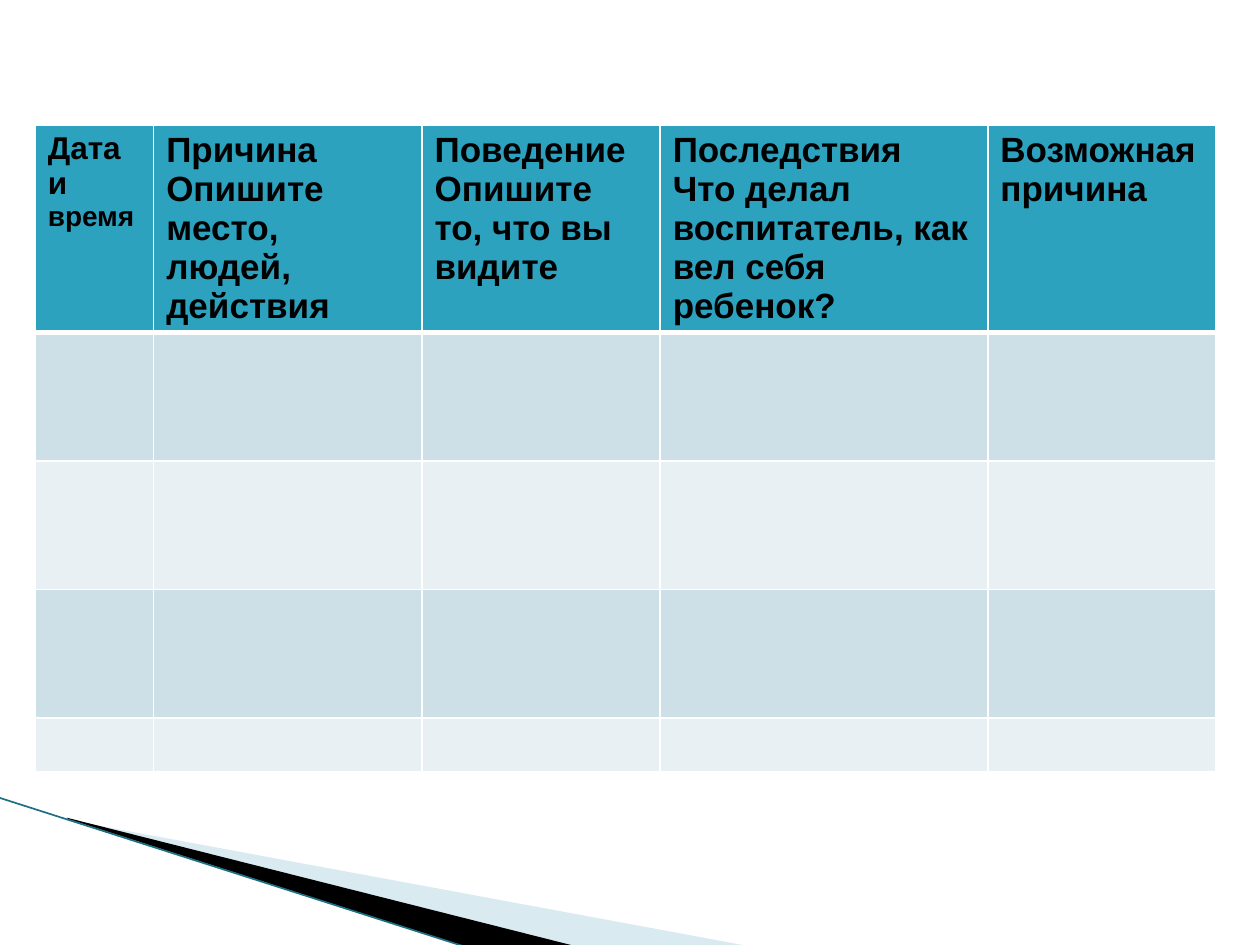
from lxml import etree
from pptx import Presentation
from pptx import util as u
from pptx.dml.color import RGBColor
from pptx.enum import shapes
from pptx.oxml import ns

COLORS = {
    "header": "2DA2BF", "odd": "CDE0E8", "even": "E8F0F4", "border": "FFFFFF",
    "text": "000000", "pale": "A0CBDC", "dark": "000000", "edge": "1D6F82",
}
FONT = "Arial"
COLUMN_WIDTHS = [0.94, 2.13, 1.89, 2.6, 1.81]
ROW_HEIGHTS = [1.56, 1.02, 1.02, 1.02, 0.43]
# Each header is a list of paragraphs, each paragraph a list of (text, size)
HEADERS = [
    [[("Дата и ", 18), ("время", 16)]],
    [[("Причина", 20)], [("Опишите место, людей, действия", 20)]],
    [[("Поведение", 20)], [("Опишите то, что вы видите", 20)]],
    [[("Последствия", 20)], [("Что делал воспитатель, как вел себя ребенок?", 20)]],
    [[("Возможная причина", 20)]],
]


def color(name):
    return RGBColor.from_string(COLORS[name])


def add_span(para, text, size=20, bold=True, fill="text"):
    span = para.add_run()
    span.text = text
    span.font.name = FONT
    span.font.size = u.Pt(size)
    span.font.bold = bold
    span.font.color.rgb = color(fill)


def set_borders(cell, bottom):
    props = cell._tc.get_or_add_tcPr()
    for index, (side, width) in enumerate((("L", 1), ("R", 1), ("T", 1), ("B", bottom))):
        line = etree.Element(ns.qn(f"a:ln{side}"), w=str(u.Pt(width)))
        fill = etree.SubElement(line, ns.qn("a:solidFill"))
        etree.SubElement(fill, ns.qn("a:srgbClr"), val=COLORS["border"])
        props.insert(index, line)


def add_wedge(page, points, fill, alpha=None):
    corners = [(u.Inches(x), u.Inches(y)) for x, y in points]
    builder = page.shapes.build_freeform(*corners[0])
    builder.add_line_segments(corners[1:], close=True)
    wedge = builder.convert_to_shape()
    wedge.shadow.inherit = False
    wedge.line.fill.background()
    wedge.fill.solid()
    wedge.fill.fore_color.rgb = color(fill)
    if alpha is not None:
        tint = wedge.fill._xPr.find(".//" + ns.qn("a:srgbClr"))
        etree.SubElement(tint, ns.qn("a:alpha"), val=str(alpha * 1000))


def add_corner(page, left, top, width, height):
    """Draw the wedges and the edge line in the bottom left corner."""
    right, bottom = left + width, top + height
    add_wedge(page, [(left + 0.56, top + 0.18), (right, bottom),
                     (right - 1.39, bottom), (left + 0.56, top + 0.17)], "pale", 40)
    add_wedge(page, [(left + 0.54, top + 0.16), (right - 1.38, bottom),
                     (right - 2.23, bottom + 0.01), (left + 0.55, top + 0.17)], "dark")
    edge = page.shapes.add_connector(
        shapes.MSO_CONNECTOR.STRAIGHT, u.Inches(left), u.Inches(top),
        u.Inches(right - 2.24), u.Inches(bottom + 0.01))
    edge.line.color.rgb = color("edge")
    edge.line.width = u.Pt(0.95)
    etree.SubElement(edge._element.spPr, ns.qn("a:effectLst"))


def add_log_table(page, left, top, width, height):
    """Draw the observation log: a header row and empty banded rows."""
    table = page.shapes.add_table(
        len(ROW_HEIGHTS), len(COLUMN_WIDTHS), u.Inches(left), u.Inches(top),
        u.Inches(width), u.Inches(height)).table
    for column, size in zip(table.columns, COLUMN_WIDTHS):
        column.width = u.Inches(size)
    for number, (row, size) in enumerate(zip(table.rows, ROW_HEIGHTS)):
        row.height = u.Inches(size)
        band = "header" if number == 0 else ("even", "odd")[number % 2]
        for cell in row.cells:
            cell.fill.solid()
            cell.fill.fore_color.rgb = color(band)
            set_borders(cell, bottom=3 if number == 0 else 1)
    for cell, paragraphs in zip(table.rows[0].cells, HEADERS):
        frame = cell.text_frame
        for index, spans in enumerate(paragraphs):
            para = frame.add_paragraph() if index else frame.paragraphs[0]
            for text, size in spans:
                add_span(para, text, size=size)


def main():
    deck = Presentation()
    deck.slide_width, deck.slide_height = u.Inches(10), u.Inches(7.5)
    page = deck.slides.add_slide(deck.slide_layouts[6])
    add_corner(page, -0.01, 6.33, 5.96, 1.18)
    add_log_table(page, 0.28, 0.99, sum(COLUMN_WIDTHS), sum(ROW_HEIGHTS))
    deck.save("out.pptx")


if __name__ == "__main__":
    main()
